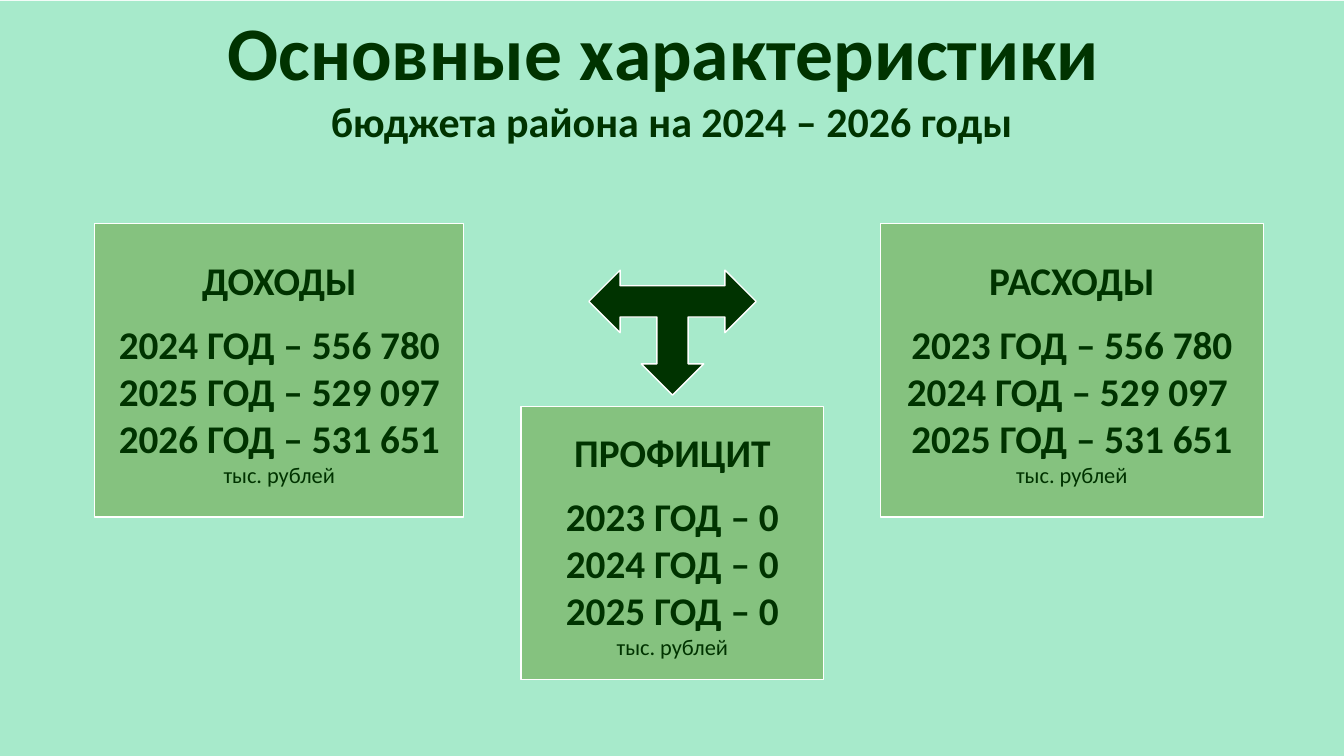
import pptx
import pptx.util
import pptx.dml.color
import pptx.enum.shapes
import pptx.enum.text

Pt = pptx.util.Pt
RGB = pptx.dml.color.RGBColor
KIND = pptx.enum.shapes.MSO_SHAPE
MINT = RGB(0xA7, 0xEA, 0xCB)
LEAF = RGB(0x85, 0xC2, 0x7F)
DARK = RGB(0x00, 0x33, 0x00)
WHITE = RGB(0xFF, 0xFF, 0xFF)
WIDE = pptx.util.Inches(13.33)
HIGH = pptx.util.Inches(7.5)
UNIT = "тыс. рублей"


def place(left, top, width, height):
    return [round(share * side / 100) for share, side in
            zip((left, top, width, height), (WIDE, HIGH, WIDE, HIGH))]


def set_all(target, values):
    for name, value in values.items():
        setattr(target, name, value)


def add_shape(slide, kind, box, fill, line=None):
    shape = slide.shapes.add_shape(kind, *place(*box))
    shape.shadow.inherit = False
    shape.fill.solid()
    shape.fill.fore_color.rgb = fill
    if line is None:
        shape.line.fill.background()
    else:
        shape.line.color.rgb = line
        shape.line.width = Pt(1)
    return shape


def add_text(frame, rows):
    frame.word_wrap = True
    for index, (text, size, bold, gap) in enumerate(rows):
        para = frame.paragraphs[0] if index == 0 else frame.add_paragraph()
        para.alignment = pptx.enum.text.PP_ALIGN.CENTER
        if gap:
            para.space_before = Pt(gap)
        run = para.add_run()
        run.text = text
        set_all(run.font, {"name": "Calibri", "size": Pt(size), "bold": bold})
        run.font.color.rgb = DARK


def add_title(slide, box):
    label = slide.shapes.add_textbox(*place(*box))
    add_text(label.text_frame, [
        ("Основные характеристики ", 54, True, 0),
        ("бюджета района на 2024 – 2026 годы", 30, True, 0),
    ])


def add_card(slide, box, head, years):
    card = add_shape(slide, KIND.RECTANGLE, box, LEAF, WHITE)
    frame = card.text_frame
    set_all(frame, {
        "vertical_anchor": pptx.enum.text.MSO_ANCHOR.MIDDLE,
        "margin_top": Pt(6),
    })
    rows = [(head, 28, True, 0)]
    rows += [(year, 28, True, 0 if index else 12)
             for index, year in enumerate(years)]
    add_text(frame, rows + [(UNIT, 16, False, 0)])


def add_arrow(slide, box):
    arrow = add_shape(slide, KIND.LEFT_RIGHT_UP_ARROW, box, DARK, WHITE)
    arrow.rotation = 180


def main():
    deck = pptx.Presentation()
    set_all(deck, {"slide_width": WIDE, "slide_height": HIGH})
    slide = deck.slides.add_slide(deck.slide_layouts[6])
    add_shape(slide, KIND.RECTANGLE, (0, 0.13, 100, 100), MINT)
    add_title(slide, (0, 0, 100, 20.13))
    add_card(slide, (7.05, 29.6, 27.46, 38.8), "ДОХОДЫ",
             ["2024 ГОД – 556 780", "2025 ГОД – 529 097", "2026 ГОД – 531 651"])
    add_card(slide, (65.49, 29.6, 28.51, 38.8), "РАСХОДЫ",
             ["2023 ГОД – 556 780", "2024 ГОД – 529 097 ", "2025 ГОД – 531 651"])
    add_arrow(slide, (43.81, 35.73, 12.45, 16.53))
    add_card(slide, (38.78, 53.73, 22.5, 36.13), "ПРОФИЦИТ",
             [f"{year} ГОД – 0" for year in range(2023, 2026)])
    deck.save("out.pptx")


if __name__ == "__main__":
    main()
